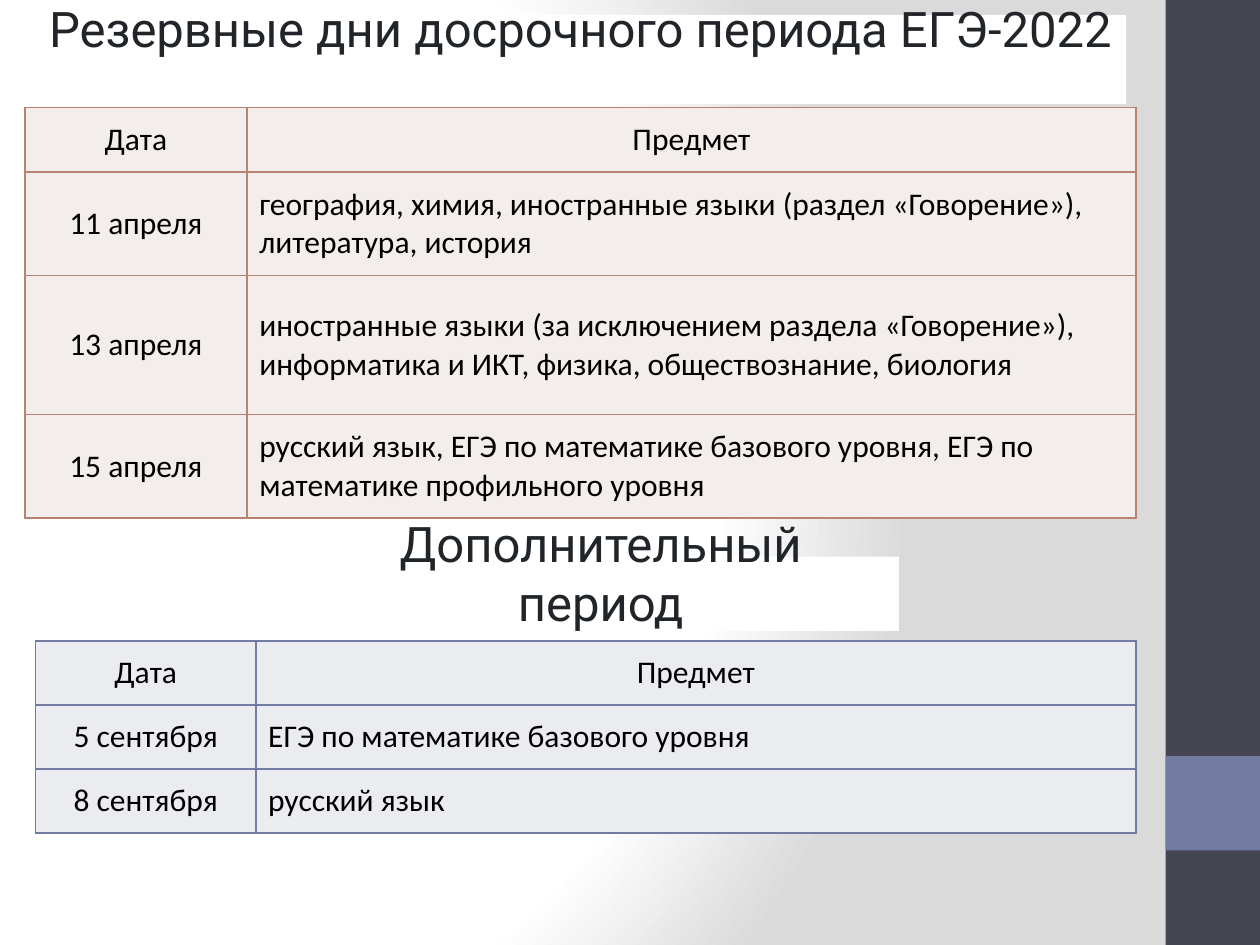
from dataclasses import dataclass

from pptx import Presentation
from pptx.dml.color import RGBColor
from pptx.enum.shapes import MSO_SHAPE
from pptx.enum.text import MSO_ANCHOR, MSO_AUTO_SIZE, PP_ALIGN
from pptx.oxml import parse_xml
from pptx.oxml.ns import nsdecls, qn
from pptx.util import Cm, Pt


@dataclass(frozen=True)
class Theme:
    white: str = "FFFFFF"
    backdrop: str = "DADADA"
    side_bar: str = "464653"
    accent: str = "727CA3"
    heading: str = "212529"
    body: str = "000000"
    reserve_line: str = "B88472"
    reserve_fill: str = "F3EDEB"
    extra_fill: str = "EBECF0"
    heading_font: str = "Roboto"
    body_font: str = "Calibri"
    heading_size: int = 28
    body_size: int = 18


THEME = Theme()
MARGIN = Cm(0.25)

HEADER = ("Дата", "Предмет")
RESERVE_DAYS = [
    HEADER,
    ("11 апреля", "география, химия, иностранные языки (раздел «Говорение»), "
                  "литература, история"),
    ("13 апреля", "иностранные языки (за исключением раздела «Говорение»), "
                  "информатика и ИКТ, физика, обществознание, биология"),
    ("15 апреля", "русский язык, ЕГЭ по математике базового уровня, "
                  "ЕГЭ по математике профильного уровня"),
]
EXTRA_DAYS = [
    HEADER,
    ("5 сентября", "ЕГЭ по математике базового уровня"),
    ("8 сентября", "русский язык"),
]


def paint(fill, color):
    fill.solid()
    fill.fore_color.rgb = RGBColor.from_string(color)


def write(text_frame, text, font, size, color, alignment):
    paragraph = text_frame.paragraphs[0]
    paragraph.alignment = alignment
    run = paragraph.add_run()
    run.text = text
    run.font.name = font
    run.font.size = Pt(size)
    run.font.color.rgb = RGBColor.from_string(color)


def set_background(slide):
    """Fill the slide with a radial gradient, which needs XML."""
    slide.background.fill.gradient()
    linear = slide.element.find(".//" + qn("a:gradFill"))
    stops = "".join(
        f'<a:gs pos="{position * 1000}"><a:srgbClr val="{color}"/></a:gs>'
        for position, color in ((0, THEME.white), (75, THEME.white), (100, THEME.backdrop))
    )
    radial = parse_xml(
        f'<a:gradFill {nsdecls("a")} rotWithShape="1"><a:gsLst>{stops}</a:gsLst>'
        '<a:path path="circle"><a:fillToRect l="20000" t="50000" r="100000" b="50000"/>'
        "</a:path></a:gradFill>"
    )
    linear.getparent().replace(linear, radial)


def add_block(slide, left, top, width, height, color):
    block = slide.shapes.add_shape(MSO_SHAPE.RECTANGLE, left, top, width, height)
    block.shadow.inherit = False
    block.line.fill.background()
    paint(block.fill, color)


def add_side_bar(slide, left, top, width, height):
    add_block(slide, left, top, width, height, THEME.side_bar)
    add_block(slide, left, top + int(height * 0.8), width, height // 10, THEME.accent)


def format_heading(shape, text, box, side_margin, bottom_margin, wrap):
    """Place a white heading whose text stands on the bottom margin."""
    shape.left, shape.top, shape.width, shape.height = box
    paint(shape.fill, THEME.white)
    text_frame = shape.text_frame
    text_frame.auto_size = MSO_AUTO_SIZE.NONE
    text_frame.word_wrap = wrap
    text_frame.vertical_anchor = MSO_ANCHOR.BOTTOM
    text_frame.margin_left = text_frame.margin_right = side_margin
    text_frame.margin_top = 0
    text_frame.margin_bottom = bottom_margin
    write(text_frame, text, THEME.heading_font, THEME.heading_size, THEME.heading,
          PP_ALIGN.CENTER)


def set_borders(cell, color):
    properties = cell._tc.get_or_add_tcPr()
    for index, side in enumerate(("lnL", "lnR", "lnT", "lnB")):
        properties.insert(index, parse_xml(
            f'<a:{side} {nsdecls("a")} w="{Pt(1)}"><a:solidFill>'
            f'<a:srgbClr val="{color}"/></a:solidFill></a:{side}>'
        ))


def add_schedule(slide, left, top, width, row_heights, rows, fill_color, line_color):
    """Add a table of dates and subjects with columns in the ratio 1 to 4."""
    frame = slide.shapes.add_table(len(rows), 2, left, top, width, sum(row_heights))
    table = frame.table
    table.first_row = table.horz_banding = False
    table.columns[0].width = width // 5
    table.columns[1].width = width - width // 5
    for row_index, (row, height) in enumerate(zip(rows, row_heights)):
        table.rows[row_index].height = height
        for column_index, text in enumerate(row):
            cell = table.cell(row_index, column_index)
            cell.vertical_anchor = MSO_ANCHOR.MIDDLE
            cell.margin_left = cell.margin_right = MARGIN
            cell.margin_top = cell.margin_bottom = MARGIN
            paint(cell.fill, fill_color)
            set_borders(cell, line_color)
            centred = row_index == 0 or column_index == 0
            write(cell.text_frame, text, THEME.body_font, THEME.body_size, THEME.body,
                  PP_ALIGN.CENTER if centred else PP_ALIGN.LEFT)


def build_slide(presentation):
    slide = presentation.slides.add_slide(presentation.slide_layouts[5])
    set_background(slide)
    add_side_bar(slide, Cm(23.5), 0, Cm(1.9), presentation.slide_height)

    format_heading(slide.shapes.title, "Резервные дни досрочного периода ЕГЭ-2022",
                   (Cm(0.7), Cm(0.3), Cm(22), Cm(1.8)), MARGIN, Cm(0.95), False)
    add_schedule(slide, Cm(0.5), Cm(2.17), Cm(22.4),
                 [Cm(1.3), Cm(2.08), Cm(2.81), Cm(2.08)],
                 RESERVE_DAYS, THEME.reserve_fill, THEME.reserve_line)

    box = (Cm(6.1), Cm(11.22), Cm(12.02), Cm(1.5))
    format_heading(slide.shapes.add_textbox(*box), "Дополнительный период",
                   box, Cm(1), 0, True)
    add_schedule(slide, Cm(0.72), Cm(12.92), Cm(22.18), [Cm(1.29)] * len(EXTRA_DAYS),
                 EXTRA_DAYS, THEME.extra_fill, THEME.accent)


def main():
    presentation = Presentation()
    presentation.slide_width = Cm(25.4)
    presentation.slide_height = Cm(19.05)
    build_slide(presentation)
    presentation.save("out.pptx")


if __name__ == "__main__":
    main()
